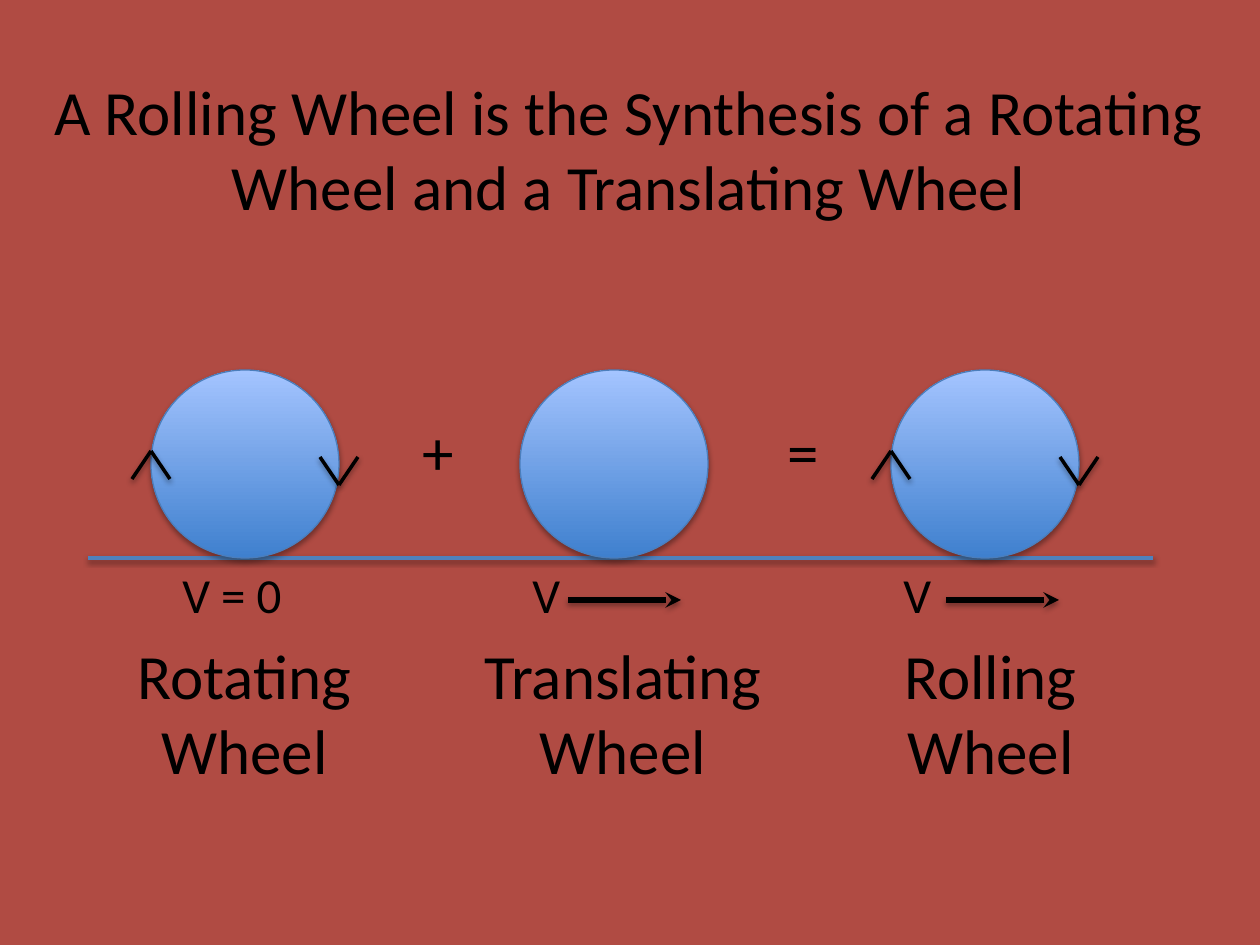
from lxml.etree import SubElement
from pptx import Presentation
from pptx.dml.color import RGBColor
from pptx.enum.shapes import MSO_CONNECTOR as Connector, MSO_SHAPE as Shape
from pptx.enum.text import MSO_ANCHOR as Anchor, PP_ALIGN as Align
from pptx.oxml.ns import qn
from pptx.util import Emu, Pt

TITLE = "A Rolling Wheel is the Synthesis of a Rotating Wheel and a Translating Wheel"
TITLE_BOX = (30, 69, 1197, 158)
WHEELS = [
    {"left": 151, "spins": True, "name": ["Rotating", "Wheel"], "name_box": (125, 239),
     "speed": "V = 0", "speed_box": (170, 169), "arrow": None},
    {"left": 520, "spins": False, "name": ["Translating", "Wheel"], "name_box": (470, 306),
     "speed": "V", "speed_box": (520, 74), "arrow": 568},
    {"left": 891, "spins": True, "name": ["Rolling", "Wheel"], "name_box": (871, 239),
     "speed": "V", "speed_box": (891, 69), "arrow": 946},
]
OPERATORS = [(" +", 396), ("=", 775)]

BACKGROUND, BLACK, GROUND_BLUE, RIM = "B04B43", "000000", "4F81BD", "4B7EBC"
WHEEL_GRADIENT = ["3F80CE", "A4C4FF"]
GROUND = (88, 558, 1153, 558)
DIAMETER = 188
WHEEL_TOP = GROUND[1] - DIAMETER
UP_TIP, DOWN_TIP = 451, 485
HEAD_X, HEAD_Y = 19, 28
ARROW_Y, ARROW_LENGTH = 600, 113
SPEED_TOP, SPEED_HEIGHT = 558, 72
NAME_TOP, NAME_HEIGHT = 630, 165
OPERATOR_TOP, OPERATOR_WIDTH, OPERATOR_HEIGHT = 406, 74, 89
PX = 914400 / 126


def px(*values):
    return [Emu(round(value * PX)) for value in values]


def color(text):
    return RGBColor.from_string(text)


def apply(target, values):
    for name, value in values.items():
        setattr(target, name, value)


def add_shadow(shape, distance, opacity):
    effects = shape._element.spPr.get_or_add_effectLst() if hasattr(
        shape._element.spPr, "get_or_add_effectLst") else SubElement(
        shape._element.spPr, qn("a:effectLst"))
    outer = SubElement(effects, qn("a:outerShdw"), blurRad="40000", dist=str(distance),
                       dir="5400000", rotWithShape="0")
    black = SubElement(outer, qn("a:srgbClr"), val=BLACK)
    SubElement(black, qn("a:alpha"), val=str(opacity * 1000))


def add_line(ends, tint=BLACK, width=2, arrow=False):
    line = page.shapes.add_connector(Connector.STRAIGHT, *px(*ends))
    line.line.color.rgb = color(tint)
    line.line.width = Pt(width)
    if arrow:
        SubElement(line.line._get_or_add_ln(), qn("a:tailEnd"), type="stealth")
    add_shadow(line, 20000, 38)


def add_head(x, tip, tail):
    for side in (-1, 1):
        add_line((x, tip, x + side * HEAD_X, tail))


def add_wheel(left):
    wheel = page.shapes.add_shape(Shape.OVAL, *px(left, WHEEL_TOP, DIAMETER, DIAMETER))
    wheel.fill.gradient()
    wheel.fill.gradient_angle = 90
    for stop, tint, position in zip(wheel.fill.gradient_stops, WHEEL_GRADIENT, (0, 1)):
        stop.color.rgb = color(tint)
        stop.position = position
    wheel.line.color.rgb = color(RIM)
    wheel.line.width = Pt(0.75)
    add_shadow(wheel, 23000, 35)


def write(box, lines, size, align):
    frame = box.text_frame
    frame.word_wrap = True
    frame.text = "\n".join(lines)
    for para in frame.paragraphs:
        para.alignment = align
        apply(para.font, {"name": "Calibri", "size": Pt(size)})
        para.font.color.rgb = color(BLACK)


def add_text(bounds, lines, size, align=Align.LEFT):
    write(page.shapes.add_textbox(*px(*bounds)), lines, size, align)


deck = Presentation()
deck.slide_width, deck.slide_height = px(1260, 945)
page = deck.slides.add_slide(deck.slide_layouts[5])
page.background.fill.solid()
page.background.fill.fore_color.rgb = color(BACKGROUND)

title = page.shapes.title
apply(title, dict(zip(("left", "top", "width", "height"), px(*TITLE_BOX))))
write(title, [TITLE], 36, Align.CENTER)
title.text_frame.vertical_anchor = Anchor.MIDDLE

add_line(GROUND, GROUND_BLUE)
for wheel in WHEELS:
    left = wheel["left"]
    add_wheel(left)
    if wheel["spins"]:
        add_head(left, UP_TIP, UP_TIP + HEAD_Y)
        add_head(left + DIAMETER, DOWN_TIP, DOWN_TIP - HEAD_Y)
    name_left, name_width = wheel["name_box"]
    add_text((name_left, NAME_TOP, name_width, NAME_HEIGHT), wheel["name"], 36, Align.CENTER)
    speed_left, speed_width = wheel["speed_box"]
    add_text((speed_left, SPEED_TOP, speed_width, SPEED_HEIGHT), [wheel["speed"]], 28)
    if wheel["arrow"]:
        start = wheel["arrow"]
        add_line((start, ARROW_Y, start + ARROW_LENGTH, ARROW_Y), width=3, arrow=True)

for sign, left in OPERATORS:
    add_text((left, OPERATOR_TOP, OPERATOR_WIDTH, OPERATOR_HEIGHT), [sign], 36)

deck.save("out.pptx")
